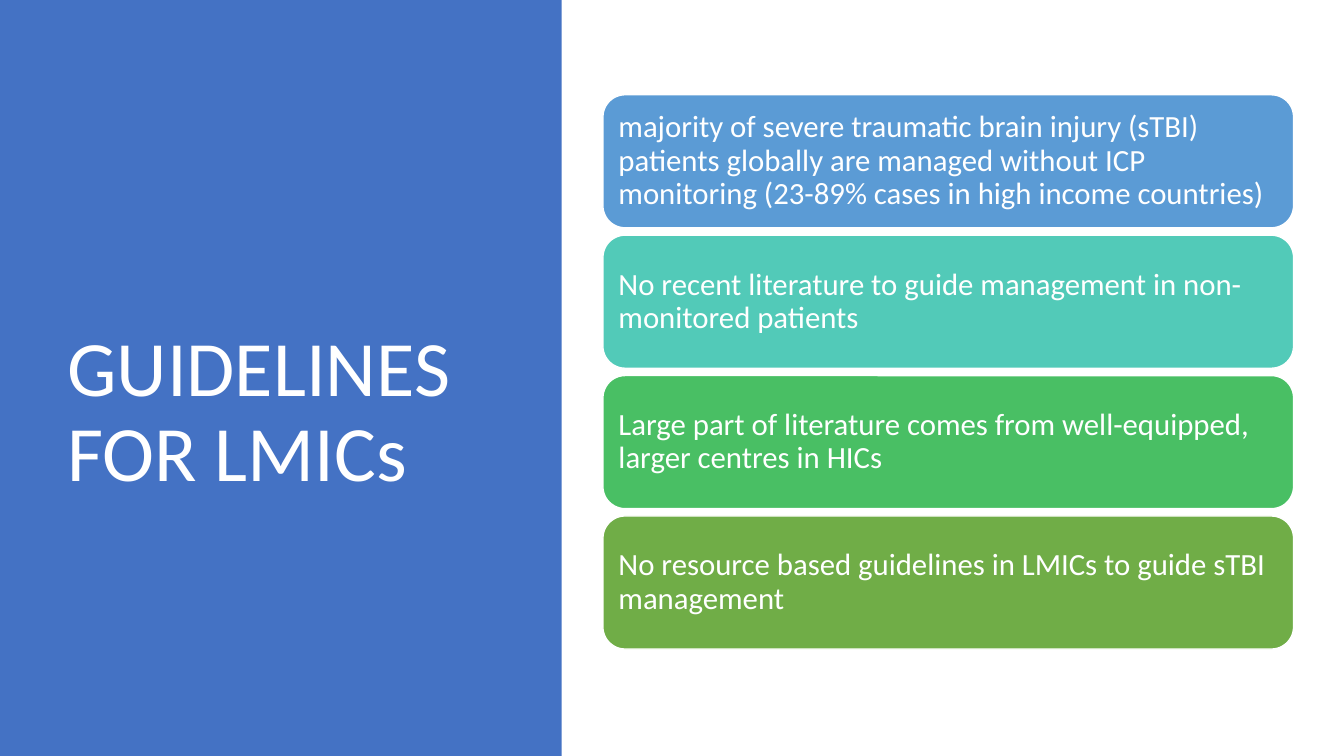
"""Build the slide on guidelines for LMICs."""
from pptx import Presentation
from pptx.dml.color import RGBColor
from pptx.enum import shapes, text
from pptx.util import Inches, Pt


def paint(target, color):
    target.solid()
    target.fore_color.rgb = RGBColor.from_string(color)


def write(frame, words, size):
    frame.word_wrap = True
    frame.vertical_anchor = text.MSO_ANCHOR.MIDDLE
    paragraph = frame.paragraphs[0]
    paragraph.text = words
    paragraph.alignment = text.PP_ALIGN.LEFT
    paragraph.line_spacing = 0.9
    paragraph.font.name = "Calibri"
    paragraph.font.size = Pt(size)
    paint(paragraph.font.fill, "FFFFFF")


deck = Presentation()
deck.slide_width = Inches(13.33)
deck.slide_height = Inches(7.5)
slide = deck.slides.add_slide(deck.slide_layouts[6])

side_panel = slide.shapes.add_shape(
    shapes.MSO_SHAPE.RECTANGLE, 0, 0, Inches(5.57), Inches(7.5))
side_panel.shadow.inherit = False
paint(side_panel.fill, "4472C4")
side_panel.line.fill.background()

title = slide.shapes.add_textbox(Inches(0.57), Inches(1.09), Inches(4.16), Inches(6.02))
write(title.text_frame, "GUIDELINES FOR LMICs", 56)

findings = [
    ("5B9BD5", "majority of severe traumatic brain injury (sTBI) patients globally are "
               "managed without ICP monitoring (23-89% cases in high income countries)"),
    ("52CAB8", "No recent literature to guide management in non-monitored patients"),
    ("49BF64", "Large part of literature comes from well-equipped, larger centres in HICs"),
    ("70AD47", "No resource based guidelines in LMICs to guide sTBI management"),
]
first_top, pitch = 0.94, 1.393
for row, (color, words) in enumerate(findings):
    finding = slide.shapes.add_shape(
        shapes.MSO_SHAPE.ROUNDED_RECTANGLE,
        Inches(5.98), Inches(first_top + row * pitch), Inches(6.85), Inches(1.32))
    finding.shadow.inherit = False
    paint(finding.fill, color)
    paint(finding.line.fill, "FFFFFF")
    finding.line.width = Pt(1)
    frame = finding.text_frame
    frame.margin_left = frame.margin_right = Inches(0.09)
    frame.margin_top = frame.margin_bottom = Inches(0.09)
    write(frame, words, 22)

deck.save("out.pptx")
